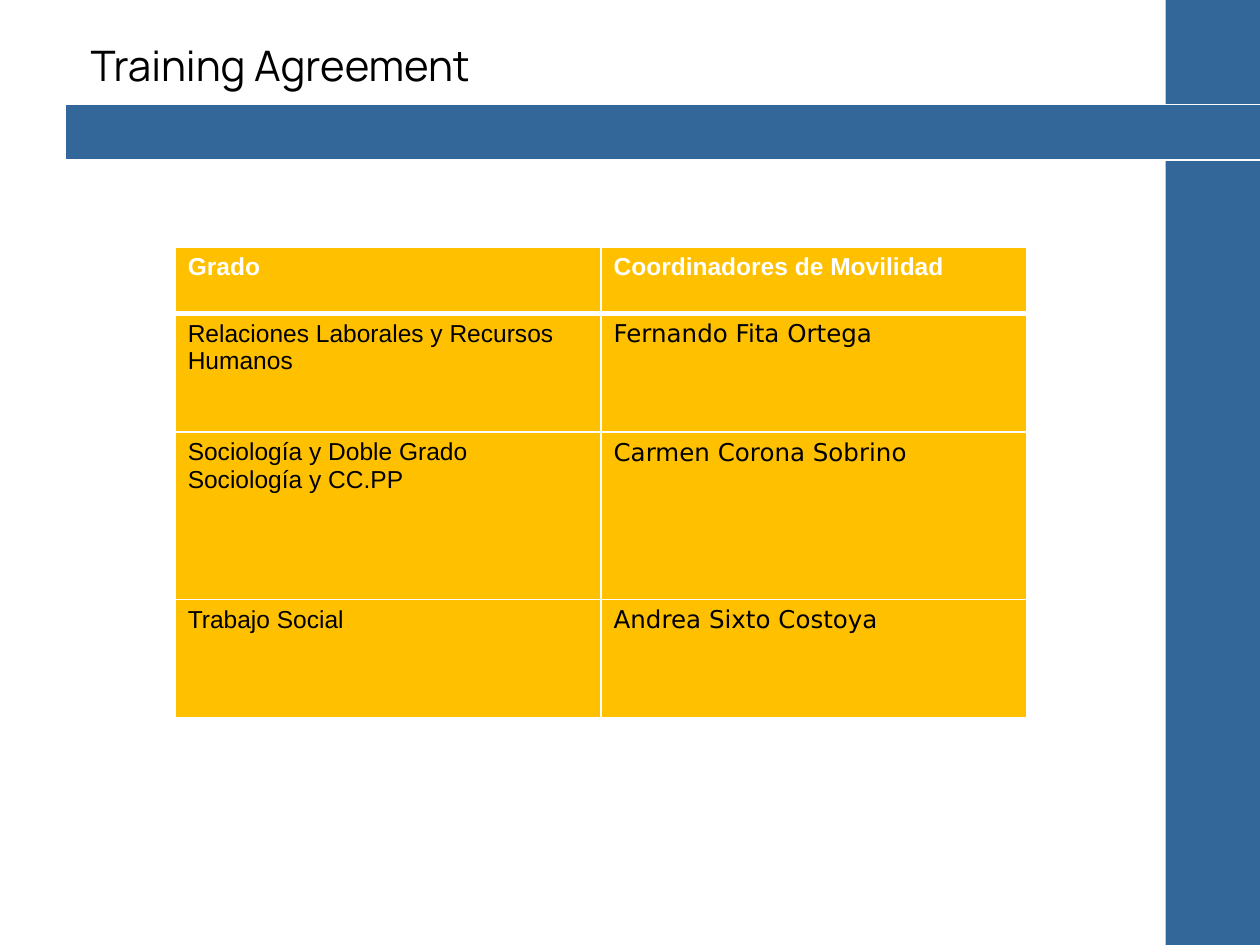
from dataclasses import dataclass

from lxml import etree
from pptx import Presentation
from pptx.dml.color import RGBColor
from pptx.enum.shapes import MSO_SHAPE
from pptx.enum.text import MSO_ANCHOR, PP_ALIGN
from pptx.oxml.ns import qn
from pptx.util import Inches, Pt

RECTANGLE = MSO_SHAPE.RECTANGLE
MIDDLE = MSO_ANCHOR.MIDDLE
LEFT = PP_ALIGN.LEFT

SLIDE_WIDTH, SLIDE_HEIGHT = Inches(10), Inches(7.5)
TITLE_ONLY_LAYOUT = 5
COLORS = {"blue": "336699", "amber": "FFC000", "white": "FFFFFF", "black": "000000"}


@dataclass(frozen=True)
class Area:
    """Position and size in percent of the slide's width and height."""

    left: float
    top: float
    width: float
    height: float

    def lengths(self) -> tuple[int, int, int, int]:
        return (
            int(SLIDE_WIDTH * self.left / 100),
            int(SLIDE_HEIGHT * self.top / 100),
            int(SLIDE_WIDTH * self.width / 100),
            int(SLIDE_HEIGHT * self.height / 100),
        )


@dataclass(frozen=True)
class Bar:
    area: Area
    outlined: bool


@dataclass(frozen=True)
class Row:
    degree: str
    coordinator: str
    height: float
    header: bool = False


BARS = [
    Bar(Area(92.5, 0, 7.5, 100), False),
    Bar(Area(5.2, 11.07, 99, 5.87), True),
]
TITLE_AREA = Area(6.2, -1.47, 85, 16.67)
ROWS = [
    Row("Grado", "Coordinadores de Movilidad", 7.07, True),
    Row("Relaciones Laborales y Recursos Humanos", "Fernando Fita Ortega", 12.53),
    Row("Sociología y Doble Grado Sociología y CC.PP", "Carmen Corona Sobrino", 17.73),
    Row("Trabajo Social", "Andrea Sixto Costoya", 12.53),
]
TABLE_AREA = Area(13.9, 26.13, 67.6, sum(row.height for row in ROWS))


def color(name: str) -> RGBColor:
    return RGBColor.from_string(COLORS[name])


def style_font(font, name: str, size: float, color_name: str, bold: bool = False) -> None:
    font.name = name
    font.size = Pt(size)
    font.bold = bold
    font.color.rgb = color(color_name)


def draw_bar(slide, bar: Bar) -> None:
    shape = slide.shapes.add_shape(RECTANGLE, *bar.area.lengths())
    shape.shadow.inherit = False
    shape.fill.solid()
    shape.fill.fore_color.rgb = color("blue")
    if bar.outlined:
        shape.line.color.rgb = color("white")
        shape.line.width = Pt(0.75)
    else:
        shape.line.fill.background()


def draw_title(slide, text: str) -> None:
    title = slide.shapes.title
    slide.shapes._spTree.append(title._element)
    title.left, title.top, title.width, title.height = TITLE_AREA.lengths()
    frame = title.text_frame
    frame.text = text
    frame.vertical_anchor = MIDDLE
    paragraph = frame.paragraphs[0]
    paragraph.alignment = LEFT
    style_font(paragraph.font, "Manrope", 24, "black")


def set_borders(cell, widths: dict[str, float]) -> None:
    properties = cell._tc.get_or_add_tcPr()
    for index, (side, width) in enumerate(widths.items()):
        line = etree.Element(qn(f"a:{side}"), w=str(Pt(width)))
        fill = etree.SubElement(line, qn("a:solidFill"))
        etree.SubElement(fill, qn("a:srgbClr"), val=COLORS["white"])
        properties.insert(index, line)


def fill_cell(cell, text: str, font_name: str, header: bool, top_width: float) -> None:
    cell.text = text
    style_font(
        cell.text_frame.paragraphs[0].font,
        font_name, 14, "white" if header else "black", header,
    )
    cell.fill.solid()
    cell.fill.fore_color.rgb = color("amber")
    set_borders(cell, {"lnL": 1, "lnR": 1, "lnT": top_width, "lnB": 3 if header else 1})


def draw_table(slide, rows: list[Row]) -> None:
    table = slide.shapes.add_table(len(rows), 2, *TABLE_AREA.lengths()).table
    top_width = 1
    for index, row in enumerate(rows):
        table.rows[index].height = int(SLIDE_HEIGHT * row.height / 100)
        coordinator_font = "Arial" if row.header else "DejaVu Sans"
        fill_cell(table.cell(index, 0), row.degree, "Arial", row.header, top_width)
        fill_cell(table.cell(index, 1), row.coordinator, coordinator_font, row.header, top_width)
        top_width = 3 if row.header else 1


def main() -> None:
    presentation = Presentation()
    presentation.slide_width = SLIDE_WIDTH
    presentation.slide_height = SLIDE_HEIGHT
    slide = presentation.slides.add_slide(presentation.slide_layouts[TITLE_ONLY_LAYOUT])
    for bar in BARS:
        draw_bar(slide, bar)
    draw_title(slide, "Training Agreement")
    draw_table(slide, ROWS)
    presentation.save("out.pptx")


if __name__ == "__main__":
    main()
